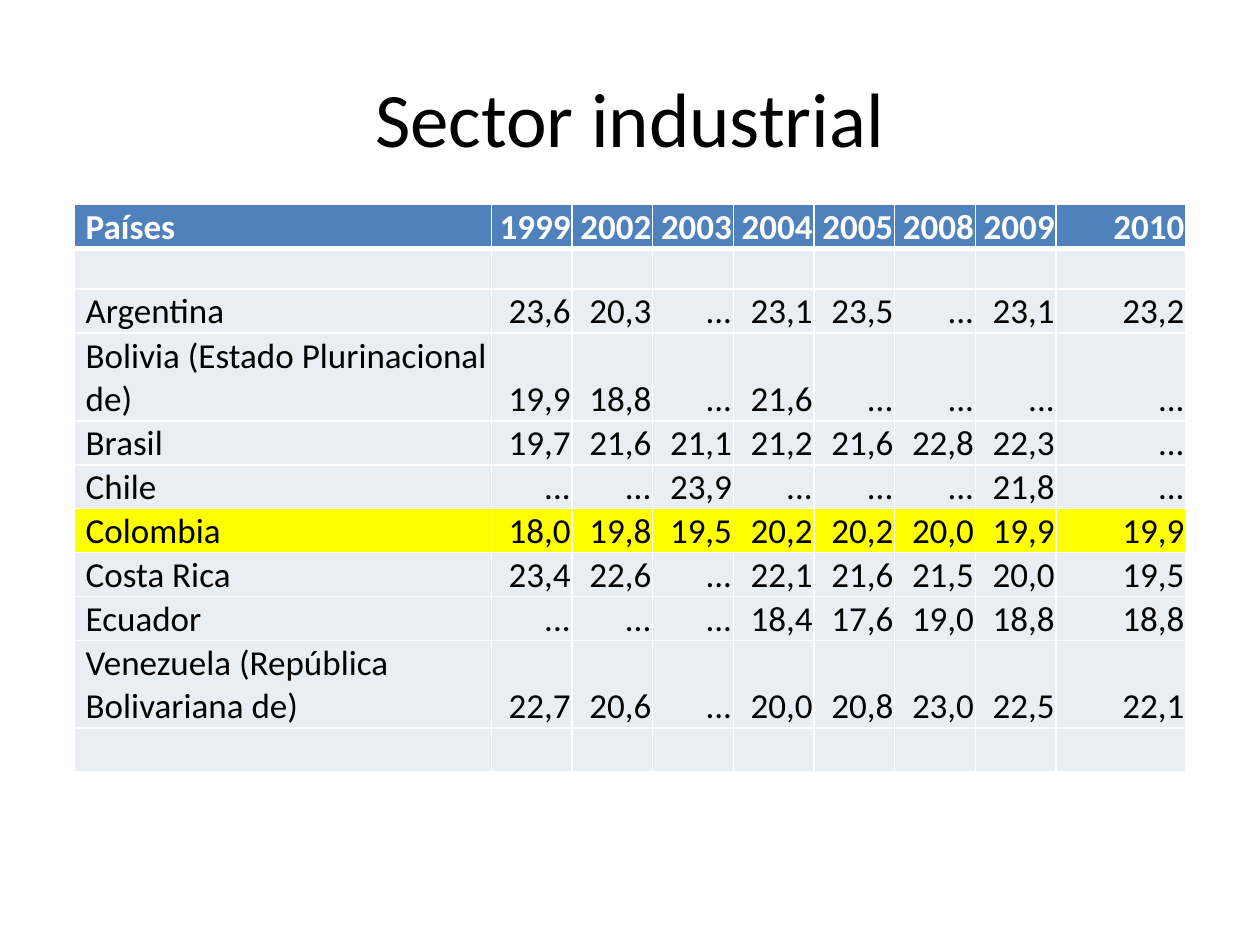
from lxml.etree import SubElement
from pptx import Presentation
from pptx.dml.color import RGBColor
from pptx.enum.text import MSO_ANCHOR, PP_ALIGN
from pptx.oxml.ns import qn
from pptx.util import Pt

TITLE = "Sector industrial"
ROWS = [
    ("Países", "1999", "2002", "2003", "2004", "2005", "2008", "2009", "2010"),
    ("",) * 9,
    ("Argentina", "23,6", "20,3", "...", "23,1", "23,5", "...", "23,1", "23,2"),
    ("Bolivia (Estado Plurinacional de)",
     "19,9", "18,8", "...", "21,6", "...", "...", "...", "..."),
    ("Brasil", "19,7", "21,6", "21,1", "21,2", "21,6", "22,8", "22,3", "..."),
    ("Chile", "...", "...", "23,9", "...", "...", "...", "21,8", "..."),
    ("Colombia", "18,0", "19,8", "19,5", "20,2", "20,2", "20,0", "19,9", "19,9"),
    ("Costa Rica", "23,4", "22,6", "...", "22,1", "21,6", "21,5", "20,0", "19,5"),
    ("Ecuador", "...", "...", "...", "18,4", "17,6", "19,0", "18,8", "18,8"),
    ("Venezuela (República Bolivariana de)",
     "22,7", "20,6", "...", "20,0", "20,8", "23,0", "22,5", "22,1"),
    ("",) * 9,
]
FONT = "Calibri"
WHITE, BLACK = "FFFFFF", "000000"
HEAD, BODY, MARK = "4F81BD", "E9EDF4", "FFFF00"
WIDTHS = [238.3] + [46.1] * 7 + [74.2]
LINE = 25.1
HEIGHTS = [LINE, 23.4] + [LINE * (1 + (len(row[0]) > 30)) for row in ROWS[2:]]


def color(code):
    return RGBColor.from_string(code)


def style(para, size, code, align, bold=False):
    para.alignment = align
    font = para.font
    font.name, font.size, font.bold = FONT, Pt(size), bold
    font.color.rgb = color(code)


def border(cell, side, width):
    line = SubElement(cell._tc.get_or_add_tcPr(), qn("a:ln" + side), w=str(Pt(width)))
    fill = SubElement(line, qn("a:solidFill"))
    SubElement(fill, qn("a:srgbClr"), val=WHITE)


def fill_cell(cell, text, row, col):
    head = row == 0
    cell.vertical_anchor = MSO_ANCHOR.BOTTOM
    cell.margin_left = Pt(0.75 if col else 6.5)
    cell.margin_top = cell.margin_right = Pt(0.75)
    cell.margin_bottom = 0
    thick = {"T": row == 1, "B": head}
    for side in "LRTB":
        border(cell, side, 3 if thick.get(side) else 1)
    cell.fill.solid()
    shade = HEAD if head else MARK if ROWS[row][0] == "Colombia" else BODY
    cell.fill.fore_color.rgb = color(shade)
    cell.text = text
    style(cell.text_frame.paragraphs[0], 20 if text else 18,
          WHITE if head else BLACK, PP_ALIGN.RIGHT if col else PP_ALIGN.LEFT, head)


def add_title(slide):
    frame = slide.shapes.add_textbox(Pt(36), Pt(21.6), Pt(648), Pt(90)).text_frame
    frame.word_wrap = True
    frame.vertical_anchor = MSO_ANCHOR.MIDDLE
    frame.text = TITLE
    style(frame.paragraphs[0], 44, BLACK, PP_ALIGN.CENTER)


def add_grid(slide):
    table = slide.shapes.add_table(
        len(ROWS), len(WIDTHS), Pt(42.5), Pt(116.8),
        Pt(sum(WIDTHS)), Pt(sum(HEIGHTS))).table
    table.horz_banding = False
    for col, width in zip(table.columns, WIDTHS):
        col.width = Pt(width)
    for r, (row, height) in enumerate(zip(ROWS, HEIGHTS)):
        table.rows[r].height = Pt(height)
        for c, text in enumerate(row):
            fill_cell(table.cell(r, c), text, r, c)


def main():
    deck = Presentation()
    deck.slide_width, deck.slide_height = Pt(720), Pt(540)
    slide = deck.slides.add_slide(deck.slide_layouts[6])
    add_title(slide)
    add_grid(slide)
    deck.save("out.pptx")


if __name__ == "__main__":
    main()
